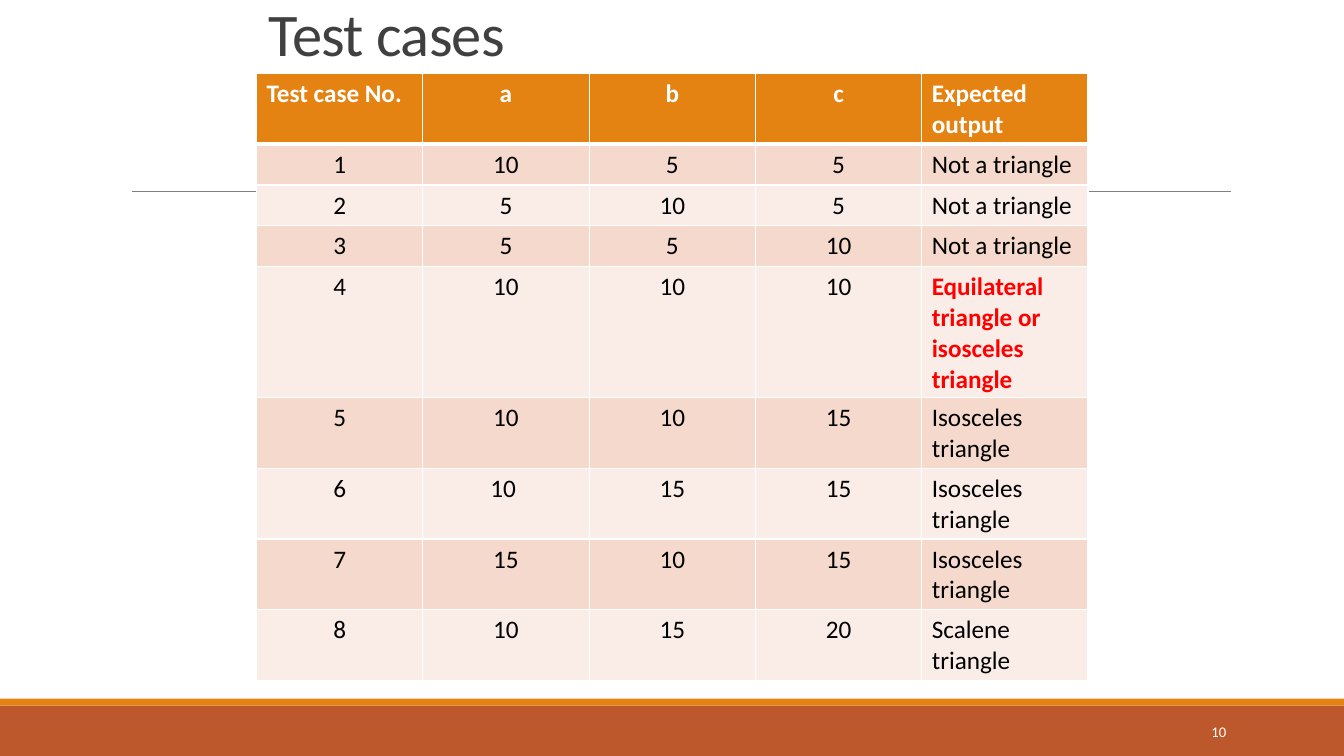
from lxml.etree import SubElement
from pptx import Presentation
from pptx.dml.color import RGBColor
from pptx.enum.shapes import MSO_CONNECTOR, MSO_SHAPE
from pptx.enum.text import MSO_ANCHOR, PP_ALIGN
from pptx.oxml.ns import qn
from pptx.util import Pt

COLORS = {
    "rust": "BD582C", "orange": "E48312", "gray": "808080",
    "title": "404040", "white": "FFFFFF", "black": "000000",
    "red": "FF0000", "odd": "F5D9CC", "even": "FAEDE7",
}
ROWS = [
    ("Test case No.", "a", "b", "c", "Expected output"),
    ("1", "10", "5", "5", "Not a triangle"),
    ("2", "5", "10", "5", "Not a triangle"),
    ("3", "5", "5", "10", "Not a triangle"),
    ("4", "10", "10", "10", "Equilateral triangle or isosceles triangle"),
    ("5", "10", "10", "15", "Isosceles triangle"),
    ("6", "10 ", "15", "15", "Isosceles triangle"),
    ("7", "15", "10", "15", "Isosceles triangle"),
    ("8", "10", "15", "20", "Scalene triangle"),
]


def add_run(p, text, size, color, bold=False):
    r = p.add_run()
    r.text = text
    r.font.name = "Calibri"
    r.font.size = Pt(size)
    r.font.bold = bold
    r.font.color.rgb = RGBColor.from_string(COLORS[color])
    return r


def add_border(cell, side, width):
    ln = SubElement(cell._tc.get_or_add_tcPr(), qn(f"a:{side}"), w=str(Pt(width)))
    fill = SubElement(ln, qn("a:solidFill"))
    SubElement(fill, qn("a:srgbClr"), val=COLORS["white"])


prs = Presentation()
prs.slide_width, prs.slide_height = Pt(960), Pt(540)
s = prs.slides.add_slide(prs.slide_layouts[6])

for top, height, color in [(504, 36, "rust"), (499, 5, "orange")]:
    sp = s.shapes.add_shape(MSO_SHAPE.RECTANGLE, 0, Pt(top), Pt(960), Pt(height))
    sp.shadow.inherit = False
    sp.fill.solid()
    sp.fill.fore_color.rgb = RGBColor.from_string(COLORS[color])
    sp.line.fill.background()

rule = s.shapes.add_connector(MSO_CONNECTOR.STRAIGHT, Pt(94.3), Pt(136.8), Pt(879), Pt(136.8))
rule.line.color.rgb = RGBColor.from_string(COLORS["gray"])
rule.line.width = Pt(0.5)
SubElement(rule._element.spPr, qn("a:effectLst"))

title = s.shapes.add_textbox(Pt(185), Pt(15.1), Pt(594), Pt(37.4))
tf = title.text_frame
tf.word_wrap = True
tf.vertical_anchor = MSO_ANCHOR.BOTTOM
p = tf.paragraphs[0]
p.line_spacing = 0.85
r = add_run(p, "Test cases", 43.2, "title")
r.font._element.set("spc", "-50")

frame = s.shapes.add_table(len(ROWS), 5, Pt(183.2), Pt(52.5), Pt(594), Pt(29.2 * len(ROWS)))
table = frame.table
for i, row in enumerate(ROWS):
    for j, text in enumerate(row):
        header = i == 0
        warning = text.startswith("Equilateral")
        cell = table.cell(i, j)
        for side in ("lnL", "lnR", "lnT", "lnB"):
            thick = (header and side == "lnB") or (i == 1 and side == "lnT")
            add_border(cell, side, 3 if thick else 1)
        cell.fill.solid()
        fill = "orange" if header else "odd" if i % 2 else "even"
        cell.fill.fore_color.rgb = RGBColor.from_string(COLORS[fill])
        p = cell.text_frame.paragraphs[0]
        left = j == 4 or (header and j == 0)
        p.alignment = PP_ALIGN.LEFT if left else PP_ALIGN.CENTER
        color = "white" if header else "red" if warning else "black"
        add_run(p, text, 18, color, header or warning)

number = s.shapes.add_textbox(Pt(780), Pt(508.3), Pt(103), Pt(28.8))
tf = number.text_frame
tf.word_wrap = True
tf.vertical_anchor = MSO_ANCHOR.MIDDLE
p = tf.paragraphs[0]
p.alignment = PP_ALIGN.RIGHT
add_run(p, "10", 10.5, "white")

prs.save("out.pptx")
